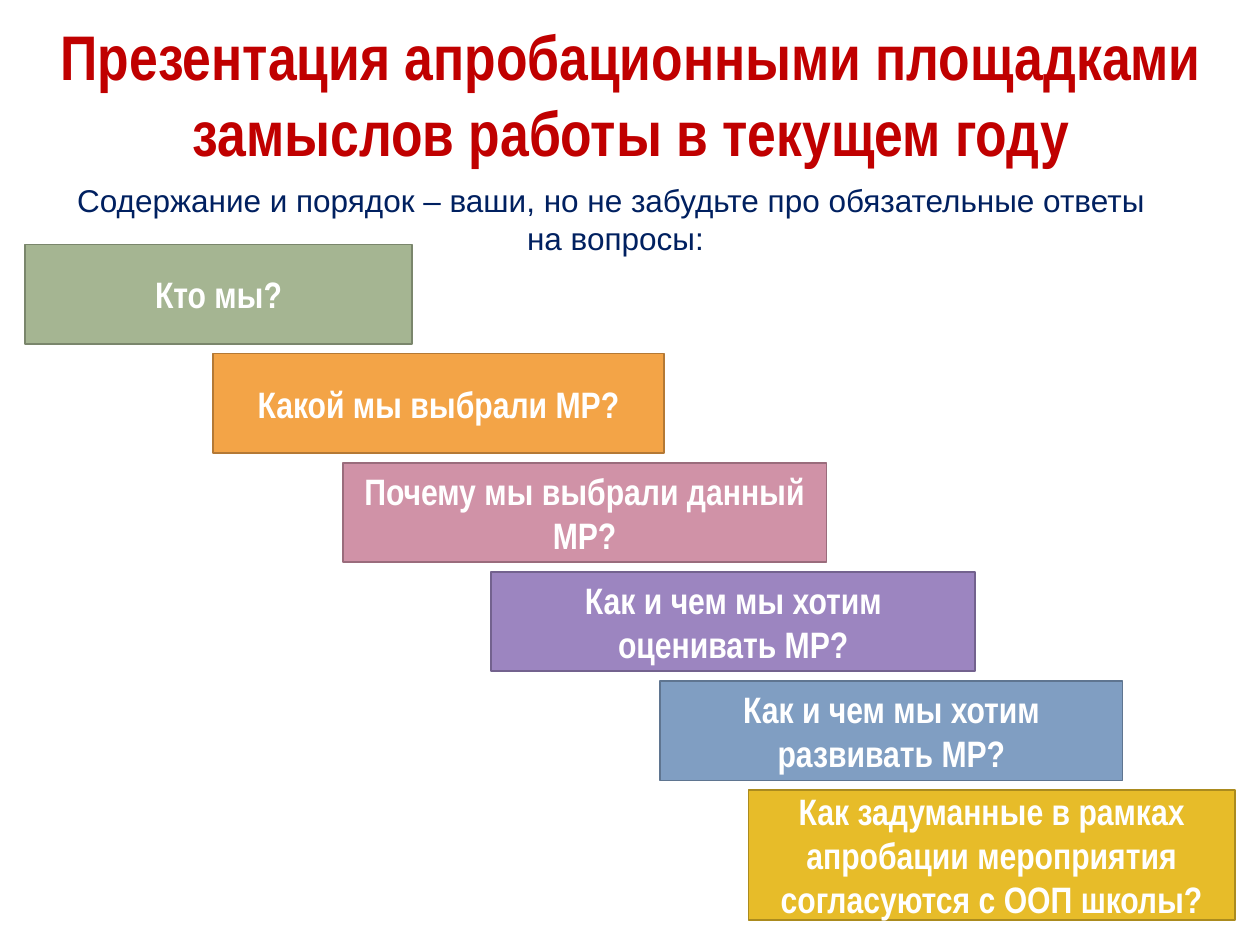
from pptx import Presentation
from pptx.dml.color import RGBColor
from pptx.enum.shapes import MSO_SHAPE as Shape
from pptx.enum.text import MSO_ANCHOR as Anchor, MSO_AUTO_SIZE as AutoSize, PP_ALIGN as Align
from pptx.util import Inches, Pt


def color(value):
    return RGBColor.from_string(value)


def write(shape, lines, font_name, size, font_color, bold):
    frame = shape.text_frame
    frame.word_wrap = True
    frame.text = "\n".join(lines)
    for paragraph in frame.paragraphs:
        paragraph.alignment = Align.CENTER
        paragraph.font.name = font_name
        paragraph.font.size = Pt(size)
        paragraph.font.bold = bold
        paragraph.font.color.rgb = color(font_color)


presentation = Presentation()
presentation.slide_width = Inches(10)
presentation.slide_height = Inches(7.5)
slide = presentation.slides.add_slide(presentation.slide_layouts[6])

title = slide.shapes.add_textbox(Inches(0.35), Inches(0.09), Inches(9.32), Inches(1.31))
write(title, ["Презентация апробационными площадками замыслов работы в текущем году"],
      "Arial Narrow", 36, "C00000", True)
title.text_frame.auto_size = AutoSize.SHAPE_TO_FIT_TEXT

questions = [
    ("Кто мы?", 0.2, 3.07, 0.79, "A5B592", "7A866C"),
    ("Какой мы выбрали МР?", 1.69, 3.58, 0.79, "F3A447", "B47935"),
    ("Почему мы выбрали данный МР?", 2.72, 3.84, 0.79, "D092A7", "9A6C7C"),
    ("Как и чем мы хотим оценивать МР?", 3.9, 3.84, 0.79, "9C85C0", "73628E"),
    ("Как и чем мы хотим развивать МР?", 5.24, 3.67, 0.79, "809EC2", "5F7590"),
    ("Как задуманные в рамках апробации мероприятия согласуются с ООП школы?",
     5.94, 3.86, 1.03, "E7BC29", "AB8B1E"),
]
first_top = 1.94
step = 0.866

for index, (question, left, width, height, fill, line) in enumerate(questions):
    box = slide.shapes.add_shape(Shape.RECTANGLE, Inches(left), Inches(first_top + index * step),
                                 Inches(width), Inches(height))
    box.shadow.inherit = False
    box.fill.solid()
    box.fill.fore_color.rgb = color(fill)
    box.line.color.rgb = color(line)
    box.line.width = Pt(1)
    box.text_frame.vertical_anchor = Anchor.MIDDLE
    write(box, [question], "Arial Narrow", 21, "FFFFFF", True)

subtitle = slide.shapes.add_textbox(Inches(0.2), Inches(1.39), Inches(9.37), Inches(0.71))
write(subtitle, ["Содержание и порядок – ваши, но не забудьте про обязательные ответы ", "на вопросы:"],
      "Arial", 18, "002060", False)
subtitle.text_frame.auto_size = AutoSize.SHAPE_TO_FIT_TEXT

presentation.save("out.pptx")
